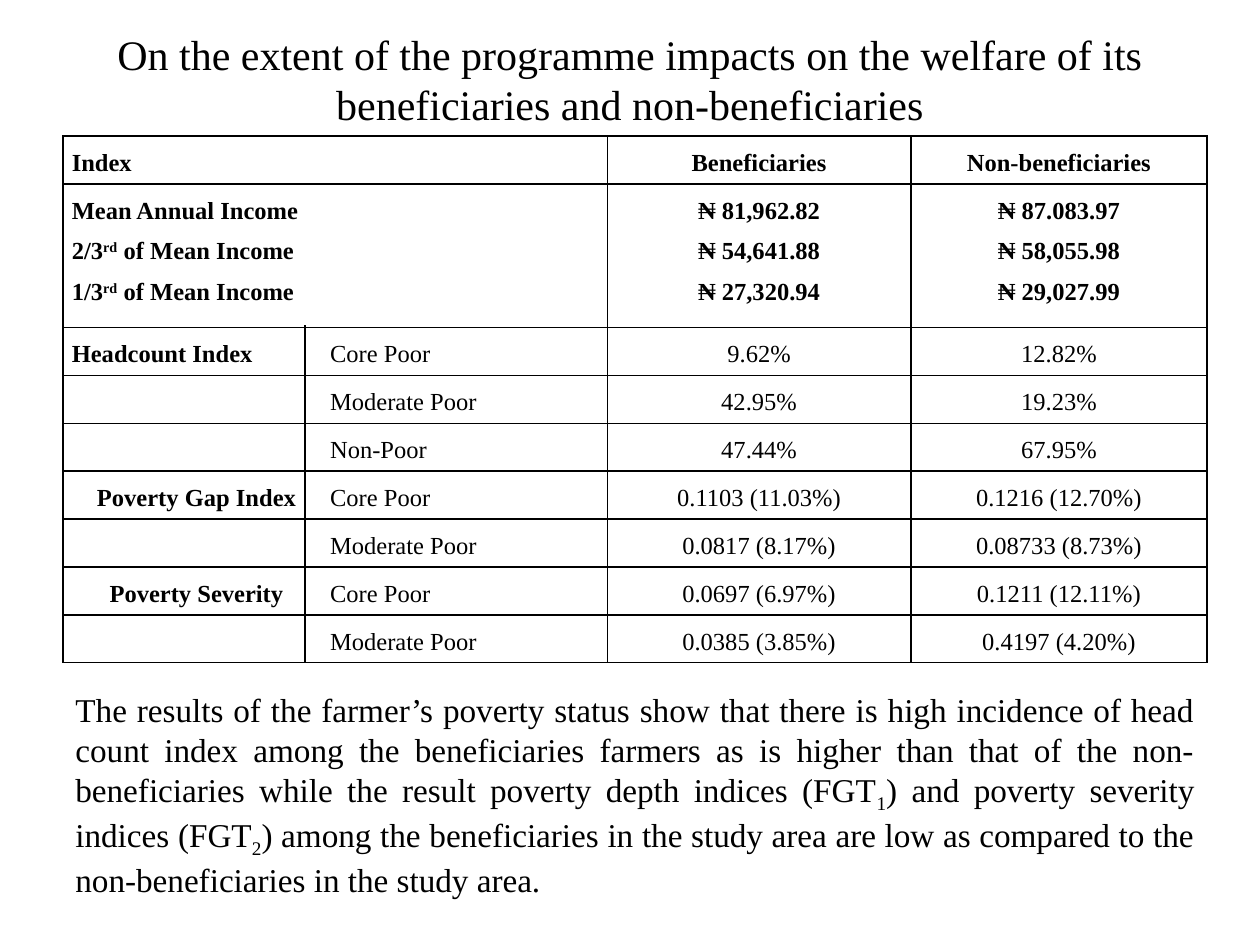
from lxml import etree
from pptx import Presentation
from pptx.dml.color import RGBColor
from pptx.enum.shapes import MSO_CONNECTOR
from pptx.enum.text import MSO_ANCHOR, PP_ALIGN
from pptx.oxml.ns import qn
from pptx.util import Inches, Pt

LEFT, CENTER, JUSTIFY = PP_ALIGN.LEFT, PP_ALIGN.CENTER, PP_ALIGN.JUSTIFY
TOP, MIDDLE = MSO_ANCHOR.TOP, MSO_ANCHOR.MIDDLE
STRAIGHT = MSO_CONNECTOR.STRAIGHT
FONT = "Times New Roman"
BLACK = "000000"
SUPERSCRIPT, SUBSCRIPT = 30, -25

TITLE = ("On the extent of the programme impacts on the welfare of its "
         "beneficiaries and non-beneficiaries")
FINDINGS = [
    ("The results of the farmer’s poverty status show that there is high incidence "
     "of head count index among the beneficiaries farmers as is higher than that of "
     "the non-beneficiaries while the result poverty depth indices (FGT", {}),
    ("1", {"baseline": SUBSCRIPT}),
    (") and poverty severity indices (FGT", {}),
    ("2", {"baseline": SUBSCRIPT}),
    (") among the beneficiaries in the study area are low as compared to the "
     "non-beneficiaries in the study area.", {}),
]

COLUMN_WIDTHS = [4.32, 2.41, 2.35]
ROW_HEIGHT, INCOME_HEIGHT = 0.38, 1.14
CLASS_TAB = 2.05
HEADINGS = ["Index", "Beneficiaries", "Non-beneficiaries"]
INCOMES = [
    ["Mean Annual Income"],
    ["2/3", "rd", " of Mean Income"],
    ["1/3", "rd", " of Mean Income"],
]
INCOME_VALUES = [
    ["₦ 81,962.82", "₦ 54,641.88", "₦ 27,320.94"],
    ["₦ 87.083.97", "₦ 58,055.98", "₦ 29,027.99"],
]
# index name, its indent, poverty class, beneficiaries, non-beneficiaries
POVERTY_ROWS = [
    ("Headcount Index", 0, "Core Poor", "9.62%", "12.82%"),
    ("", 0, "Moderate Poor", "42.95%", "19.23%"),
    ("", 0, "Non-Poor", "47.44%", "67.95%"),
    ("Poverty Gap Index", 0.2, "Core Poor", "0.1103 (11.03%)", "0.1216 (12.70%)"),
    ("", 0, "Moderate Poor", "0.0817 (8.17%)", "0.08733 (8.73%)"),
    ("Poverty Severity", 0.3, "Core Poor", "0.0697 (6.97%)", "0.1211 (12.11%)"),
    ("", 0, "Moderate Poor", "0.0385 (3.85%)", "0.4197 (4.20%)"),
]


def color(value):
    return RGBColor.from_string(value)


def add_span(para, text, size=14, bold=False, baseline=0):
    span = para.add_run()
    span.text = text
    span.font.name = FONT
    span.font.size = Pt(size)
    span.font.bold = bold
    span.font.color.rgb = color(BLACK)
    if baseline:
        span.font._element.set("baseline", str(baseline * 1000))


def write(frame, paragraphs, align=LEFT, spacing=None, tabs=(), **style):
    """Fill a text frame; each paragraph is a list of (text, own style) spans."""
    for number, spans in enumerate(paragraphs):
        para = frame.add_paragraph() if number else frame.paragraphs[0]
        para.alignment = align
        if spacing:
            para.line_spacing = spacing
        if tabs:
            stops = etree.SubElement(para._p.get_or_add_pPr(), qn("a:tabLst"))
            for tab in tabs:
                etree.SubElement(stops, qn("a:tab"), pos=str(Inches(tab)), algn="l")
        for text, own_style in spans:
            add_span(para, text, **{**style, **own_style})


def add_text(page, left, top, width, height, paragraphs, anchor=TOP, **style):
    box = page.shapes.add_textbox(Inches(left), Inches(top), Inches(width), Inches(height))
    box.text_frame.word_wrap = True
    box.text_frame.vertical_anchor = anchor
    write(box.text_frame, paragraphs, **style)


def add_borders(cell):
    """Draw the four cell edges, which must come before the fill."""
    properties = cell._tc.get_or_add_tcPr()
    for position, edge in enumerate(("lnL", "lnR", "lnT", "lnB")):
        line = etree.Element(qn(f"a:{edge}"), w=str(Pt(1)))
        fill = etree.SubElement(line, qn("a:solidFill"))
        etree.SubElement(fill, qn("a:srgbClr"), val=BLACK)
        properties.insert(position, line)


def fill_cell(cell, paragraphs, **style):
    cell.margin_left = cell.margin_right = Inches(0.07)
    cell.margin_top = cell.margin_bottom = 0
    cell.fill.background()
    add_borders(cell)
    write(cell.text_frame, paragraphs, spacing=1.5, **style)


def fill_poverty_row(cells, name, indent, poverty_class, *values):
    spans = [(f"\t{poverty_class}", {})]
    if name:
        lead = "\t" if indent else ""
        spans.insert(0, (lead + name, {"bold": True}))
    tabs = [indent, CLASS_TAB] if indent else [CLASS_TAB]
    fill_cell(cells[0], [spans], tabs=tabs)
    for cell, value in zip(cells[1:], values):
        fill_cell(cell, [[(value, {})]], align=CENTER)


def add_welfare_table(page, left, top):
    heights = [ROW_HEIGHT, INCOME_HEIGHT] + [ROW_HEIGHT] * len(POVERTY_ROWS)
    frame = page.shapes.add_table(len(heights), len(COLUMN_WIDTHS), Inches(left), Inches(top),
                                  Inches(sum(COLUMN_WIDTHS)), Inches(sum(heights)))
    table = frame.table
    table.first_row = table.horz_banding = False
    for column, width in zip(table.columns, COLUMN_WIDTHS):
        column.width = Inches(width)
    for row, height in zip(table.rows, heights):
        row.height = Inches(height)
    heading_row, income_row, *poverty_rows = [list(row.cells) for row in table.rows]

    for number, heading in enumerate(HEADINGS):
        fill_cell(heading_row[number], [[(heading, {})]], bold=True,
                  align=CENTER if number else LEFT)

    labels = [[(part, {"baseline": SUPERSCRIPT if part == "rd" else 0}) for part in parts]
              for parts in INCOMES]
    fill_cell(income_row[0], labels, bold=True)
    for cell, values in zip(income_row[1:], INCOME_VALUES):
        fill_cell(cell, [[(value, {})] for value in values], bold=True, align=CENTER)

    for cells, content in zip(poverty_rows, POVERTY_ROWS):
        fill_poverty_row(cells, *content)


def add_line(page, x1, y1, x2, y2):
    line = page.shapes.add_connector(STRAIGHT, Inches(x1), Inches(y1), Inches(x2), Inches(y2))
    line.line.color.rgb = color(BLACK)
    line.line.width = Pt(0.75)
    etree.SubElement(line._element.spPr, qn("a:effectLst"))


def main():
    deck = Presentation()
    deck.slide_width, deck.slide_height = Inches(10), Inches(7.5)
    page = deck.slides.add_slide(deck.slide_layouts[6])
    add_text(page, 0.5, 0.25, 9, 0.75, [[(TITLE, {})]], anchor=MIDDLE, align=CENTER, size=24)
    add_welfare_table(page, 0.5, 1.08)
    add_line(page, 2.42, 2.58, 2.42, 5.25)
    add_text(page, 0.5, 5.42, 9.08, 1.7, [FINDINGS], align=JUSTIFY, size=19)
    deck.save("out.pptx")


if __name__ == "__main__":
    main()
